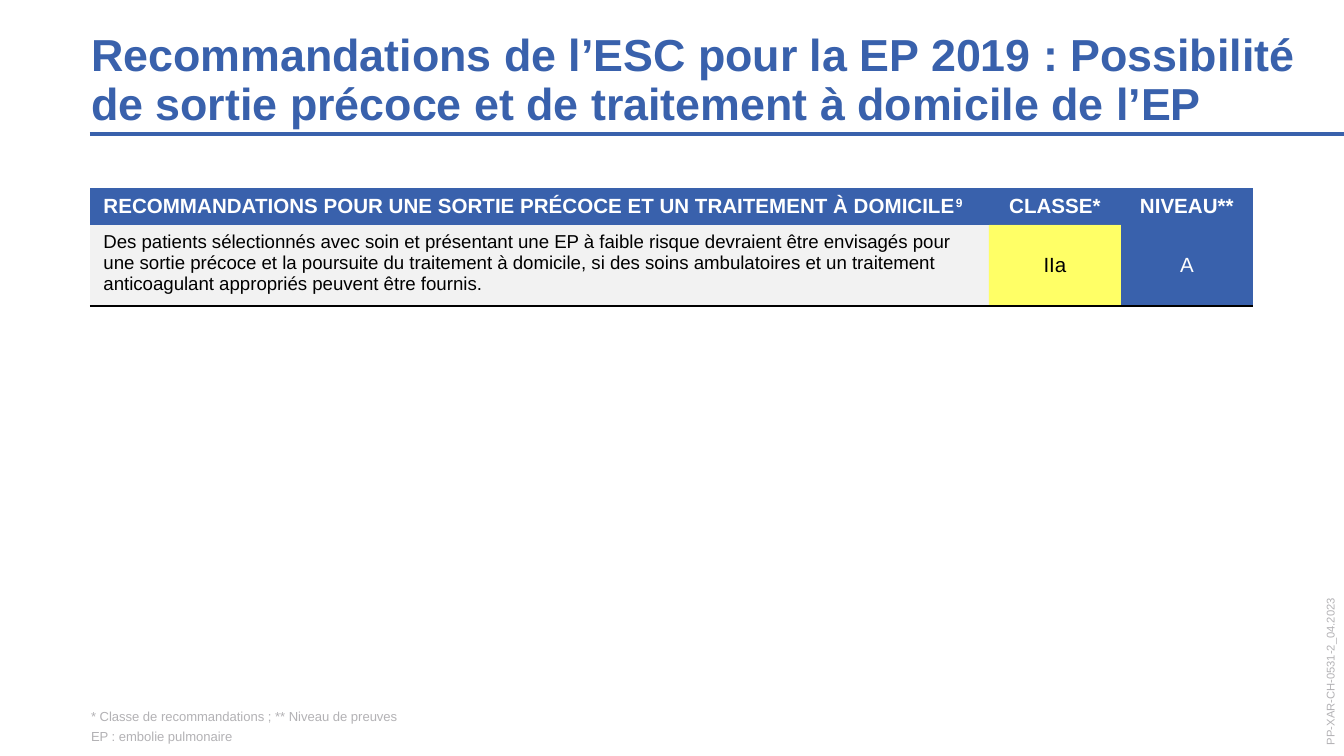
from dataclasses import dataclass

from lxml import etree
from pptx import Presentation
from pptx.dml.color import RGBColor
from pptx.enum.shapes import MSO_CONNECTOR
from pptx.enum.text import MSO_ANCHOR, MSO_AUTO_SIZE, PP_ALIGN
from pptx.oxml.ns import qn
from pptx.util import Pt

PX = 6804
STRAIGHT = MSO_CONNECTOR.STRAIGHT
TOP, MIDDLE, BOTTOM = MSO_ANCHOR.TOP, MSO_ANCHOR.MIDDLE, MSO_ANCHOR.BOTTOM
LEFT, CENTER = PP_ALIGN.LEFT, PP_ALIGN.CENTER
NO_AUTOFIT = MSO_AUTO_SIZE.NONE
NO_TABLE_STYLE = "{2D5ABB26-0587-4C30-8999-92F81FD0307C}"


@dataclass(frozen=True)
class Theme:
    font: str = "Arial"
    blue: str = "3961AC"
    grey: str = "B3B2B5"
    pale: str = "F2F2F2"
    yellow: str = "FFFF00"
    white: str = "FFFFFF"
    black: str = "000000"
    title: int = 24
    head: int = 11
    body: int = 10
    note: int = 7
    code: int = 6


class Deck:
    """Build slides in one theme, with lengths in px."""

    def __init__(self, theme, width, height):
        self.t = theme
        self.prs = Presentation()
        self.prs.slide_width, self.prs.slide_height = width * PX, height * PX
        self.s = self.prs.slides.add_slide(self.prs.slide_layouts[5])

    def style(self, p, size, color, bold=False, align=LEFT):
        p.alignment = align
        for r in p.runs:
            r.font.name, r.font.size, r.font.bold = self.t.font, Pt(size), bold
            r.font.color.rgb = RGBColor.from_string(color)

    def frame(self, sp, text, anchor):
        tf = sp.text_frame
        tf.text = text
        tf.margin_left = tf.margin_top = tf.margin_right = tf.margin_bottom = 0
        tf.word_wrap, tf.auto_size, tf.vertical_anchor = True, NO_AUTOFIT, anchor
        return tf

    def title(self, text, x, y, w, h):
        sp = self.s.shapes.title
        sp.left, sp.top, sp.width, sp.height = (v * PX for v in (x, y, w, h))
        p = self.frame(sp, text, BOTTOM).paragraphs[0]
        p.line_spacing = 0.9
        self.style(p, self.t.title, self.t.blue, True)

    def text(self, text, x, y, w, h, size, anchor=BOTTOM, rotation=0, after=0):
        sp = self.s.shapes.add_textbox(x * PX, y * PX, w * PX, h * PX)
        sp.rotation = rotation
        for p in self.frame(sp, text, anchor).paragraphs:
            p.space_after = Pt(after)
            self.style(p, size, self.t.grey)

    def rule(self, x1, x2, y):
        line = self.s.shapes.add_connector(STRAIGHT, x1 * PX, y * PX, x2 * PX, y * PX)
        line.line.color.rgb = RGBColor.from_string(self.t.blue)
        line.line.width = Pt(2.25)
        etree.SubElement(line._element.spPr, qn("a:effectLst"))

    def table(self, x, y, cols, rows):
        frame = self.s.shapes.add_table(len(rows), len(cols), x * PX, y * PX,
                                        sum(cols) * PX, sum(rows) * PX)
        table = frame.table
        table.horz_banding = False
        table._tbl.tblPr.find(qn("a:tableStyleId")).text = NO_TABLE_STYLE
        for col, width in zip(table.columns, cols):
            col.width = width * PX
        for row, height in zip(table.rows, rows):
            row.height = height * PX
        return table

    def cell(self, cell, text, size, color, fill, bold=False, align=LEFT, anchor=TOP):
        cell.text = text
        cell.vertical_anchor = anchor
        cell.fill.solid()
        cell.fill.fore_color.rgb = RGBColor.from_string(fill)
        self.style(cell.text_frame.paragraphs[0], size, color, bold, align)

    def superscript(self, cell, text):
        p = cell.text_frame.paragraphs[0]
        r = p.add_run()
        r.text = text
        self.style(p, self.t.head, self.t.white, True)
        r._r.get_or_add_rPr().set("baseline", "30000")

    def bottom_border(self, cell):
        ln = etree.Element(qn("a:lnB"), w=str(Pt(1)))
        fill = etree.SubElement(ln, qn("a:solidFill"))
        etree.SubElement(fill, qn("a:srgbClr"), val=self.t.black)
        cell._tc.get_or_add_tcPr().insert(0, ln)

    def opacity(self, cell, percent):
        color = cell._tc.tcPr.find(qn("a:solidFill")).find(qn("a:srgbClr"))
        etree.SubElement(color, qn("a:alpha"), val=str(percent * 1000))


def main():
    t = Theme()
    deck = Deck(t, 1344, 756)
    deck.text("PP-XAR-CH-0531-2_04.2023", 1236, 644, 188, 14, t.code, MIDDLE, 270)
    deck.rule(90, 1344, 134)
    deck.title("Recommandations de l’ESC pour la EP 2019 : Possibilité de sortie "
               "précoce et de traitement à domicile de l’EP", 91, 32, 1216, 98)
    deck.text("* Classe de recommandations ; ** Niveau de preuves\n"
              "EP : embolie pulmonaire", 91, 708, 1163, 36, t.note, after=2)

    table = deck.table(90, 188, (899, 132, 132), (37, 81))
    headers = ("RECOMMANDATIONS POUR UNE SORTIE PRÉCOCE ET UN TRAITEMENT À DOMICILE",
               "CLASSE*", "NIVEAU**")
    for i, header in enumerate(headers):
        deck.cell(table.cell(0, i), header, t.head, t.white, t.blue, True,
                  CENTER if i else LEFT)
    deck.superscript(table.cell(0, 0), "9")

    advice, grade, level = (table.cell(1, i) for i in range(3))
    deck.cell(advice, "Des patients sélectionnés avec soin et présentant une EP à faible "
              "risque devraient être envisagés pour une sortie précoce et la poursuite du "
              "traitement à domicile, si des soins ambulatoires et un traitement "
              "anticoagulant appropriés peuvent être fournis.", t.body, t.black, t.pale)
    deck.cell(grade, "IIa", t.head, t.black, t.yellow, align=CENTER, anchor=MIDDLE)
    deck.cell(level, "A", t.head, t.white, t.blue, align=CENTER, anchor=MIDDLE)
    deck.opacity(grade, 60)
    for cell in (advice, grade, level):
        deck.bottom_border(cell)
    deck.prs.save("out.pptx")


if __name__ == "__main__":
    main()
